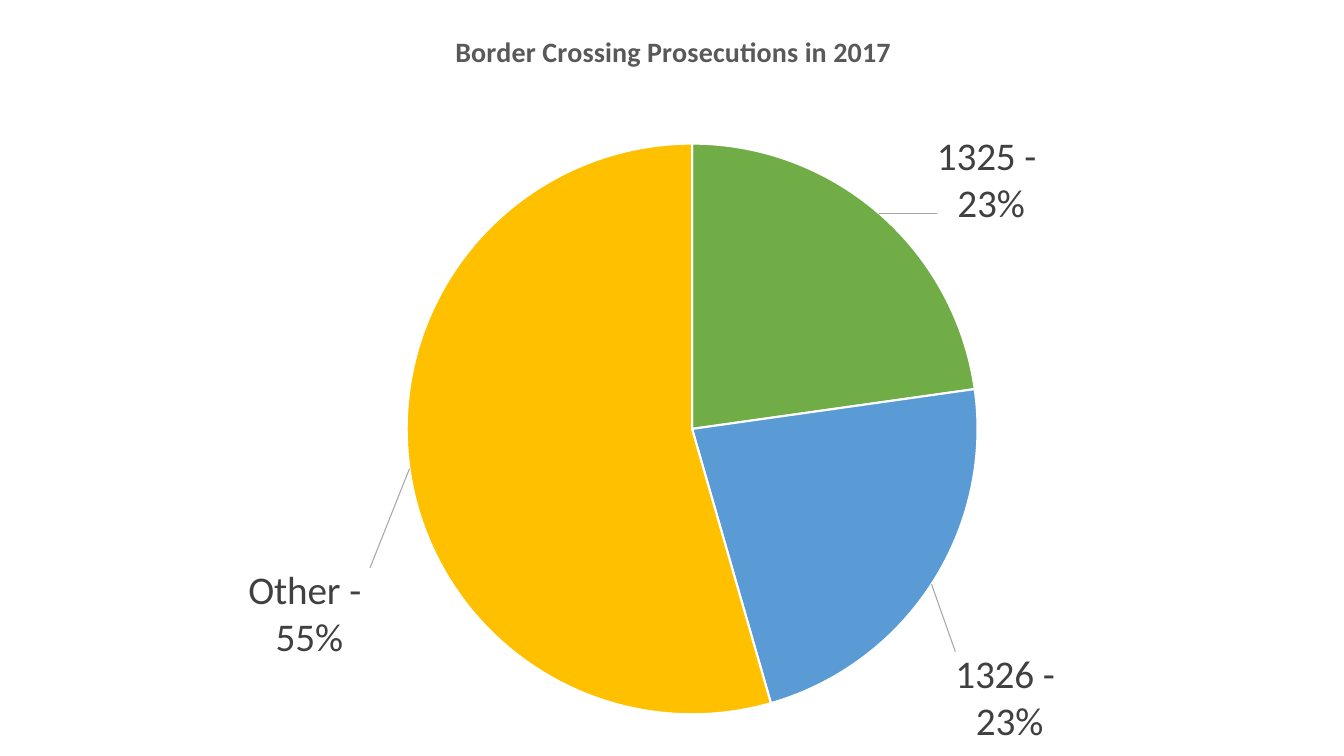
import dataclasses
import typing

import pptx
import pptx.chart.data
import pptx.dml.color
import pptx.enum.chart
import pptx.oxml
import pptx.oxml.ns
import pptx.util

COLORS = {
    "green": "70AD47",
    "blue": "5B9BD5",
    "gold": "FFC000",
    "title": "595959",
    "label": "404040",
    "leader": "A6A6A6",
    "edge": "FFFFFF",
}
FONT = "Calibri"
TITLE_FORMAT = {"name": FONT, "size": pptx.util.Pt(20), "bold": True}
LABEL_FORMAT = {"name": FONT, "size": pptx.util.Pt(28), "bold": False}
BASE_FORMAT = {"name": FONT, "size": pptx.util.Pt(10)}
PLOT_SHARES = {"x": 0.3, "y": 0.19, "w": 0.43, "h": 0.755}
TITLE_SHARES = {"x": 0.335, "y": 0.035}


@dataclasses.dataclass
class Slice:
    category: str
    value: float
    color: str
    label: str
    dx: float
    dy: float


SLICES = [
    Slice("1", 0.23, "green", "1325 - \n23%", 0.04, 0.025),
    Slice("2", 0.23, "blue", "1326 - \n23%", 0.014, 0.085),
    Slice("3", 0.55, "gold", "Other - \n55%", -0.025, 0.13),
]


def rgb(name: str) -> pptx.dml.color.RGBColor:
    return pptx.dml.color.RGBColor.from_string(COLORS[name])


def set_font(font: typing.Any, values: dict, color: str) -> None:
    for key, value in values.items():
        setattr(font, key, value)
    font.color.rgb = rgb(color)


def set_layout(parent: typing.Any, index: int, shares: dict, absolute: bool) -> None:
    for old in parent.xpath("c:layout"):
        parent.remove(old)
    target = '<c:layoutTarget val="inner"/>' if "w" in shares else ""
    modes = '<c:xMode val="edge"/><c:yMode val="edge"/>' if absolute else ""
    sizes = "".join(f'<c:{k} val="{v}"/>' for k, v in shares.items())
    xml = (
        f'<c:layout {pptx.oxml.ns.nsdecls("c")}><c:manualLayout>'
        f"{target}{modes}{sizes}</c:manualLayout></c:layout>"
    )
    parent.insert(index, pptx.oxml.parse_xml(xml))


def add_leader_lines(chart: typing.Any) -> None:
    xml = (
        f'<c:leaderLines {pptx.oxml.ns.nsdecls("c", "a")}><c:spPr><a:ln w="9525">'
        f'<a:solidFill><a:srgbClr val="{COLORS["leader"]}"/></a:solidFill>'
        "</a:ln></c:spPr></c:leaderLines>"
    )
    for flag in chart.element.xpath(".//c:ser/c:dLbls/c:showLeaderLines"):
        flag.set("val", "1")
        flag.addnext(pptx.oxml.parse_xml(xml))


def style_slice(series: typing.Any, index: int, item: Slice) -> None:
    point = series.points[index]
    point.format.fill.solid()
    point.format.fill.fore_color.rgb = rgb(item.color)
    point.format.line.color.rgb = rgb("edge")
    point.format.line.width = pptx.util.Pt(1.5)
    tf = point.data_label.text_frame
    tf.text = item.label
    for p in tf.paragraphs:
        for r in p.runs:
            set_font(r.font, LABEL_FORMAT, "label")
    point.data_label.position = pptx.enum.chart.XL_LABEL_POSITION.OUTSIDE_END


def add_pie(prs: typing.Any, s: typing.Any) -> None:
    data = pptx.chart.data.CategoryChartData(number_format="0%")
    data.categories = [item.category for item in SLICES]
    data.add_series("Series 1", [item.value for item in SLICES])
    chart = s.shapes.add_chart(
        pptx.enum.chart.XL_CHART_TYPE.PIE, 0, 0, prs.slide_width, prs.slide_height, data
    ).chart
    chart.has_legend = False
    set_font(chart.font, BASE_FORMAT, "label")

    tf = chart.chart_title.text_frame
    tf.text = "Border Crossing Prosecutions in 2017"
    set_font(tf.paragraphs[0].runs[0].font, TITLE_FORMAT, "title")

    plot = chart.plots[0]
    plot.vary_by_categories = True
    series = plot.series[0]
    labels = series.data_labels
    options = {
        "show_value": True,
        "number_format": "0%",
        "number_format_is_linked": False,
        "position": pptx.enum.chart.XL_LABEL_POSITION.OUTSIDE_END,
    }
    for key, value in options.items():
        setattr(labels, key, value)
    set_font(labels.font, LABEL_FORMAT, "label")
    for index, item in enumerate(SLICES):
        style_slice(series, index, item)

    for label, item in zip(chart.element.xpath(".//c:dLbl"), SLICES):
        set_layout(label, 1, {"x": item.dx, "y": item.dy}, False)
    set_layout(chart.element.xpath(".//c:title")[0], 1, TITLE_SHARES, True)
    set_layout(chart.element.xpath(".//c:plotArea")[0], 0, PLOT_SHARES, True)
    add_leader_lines(chart)


def main() -> None:
    prs = pptx.Presentation()
    prs.slide_width = pptx.util.Inches(13.33)
    prs.slide_height = pptx.util.Inches(7.5)
    s = prs.slides.add_slide(prs.slide_layouts[6])
    add_pie(prs, s)
    prs.save("out.pptx")


if __name__ == "__main__":
    main()
